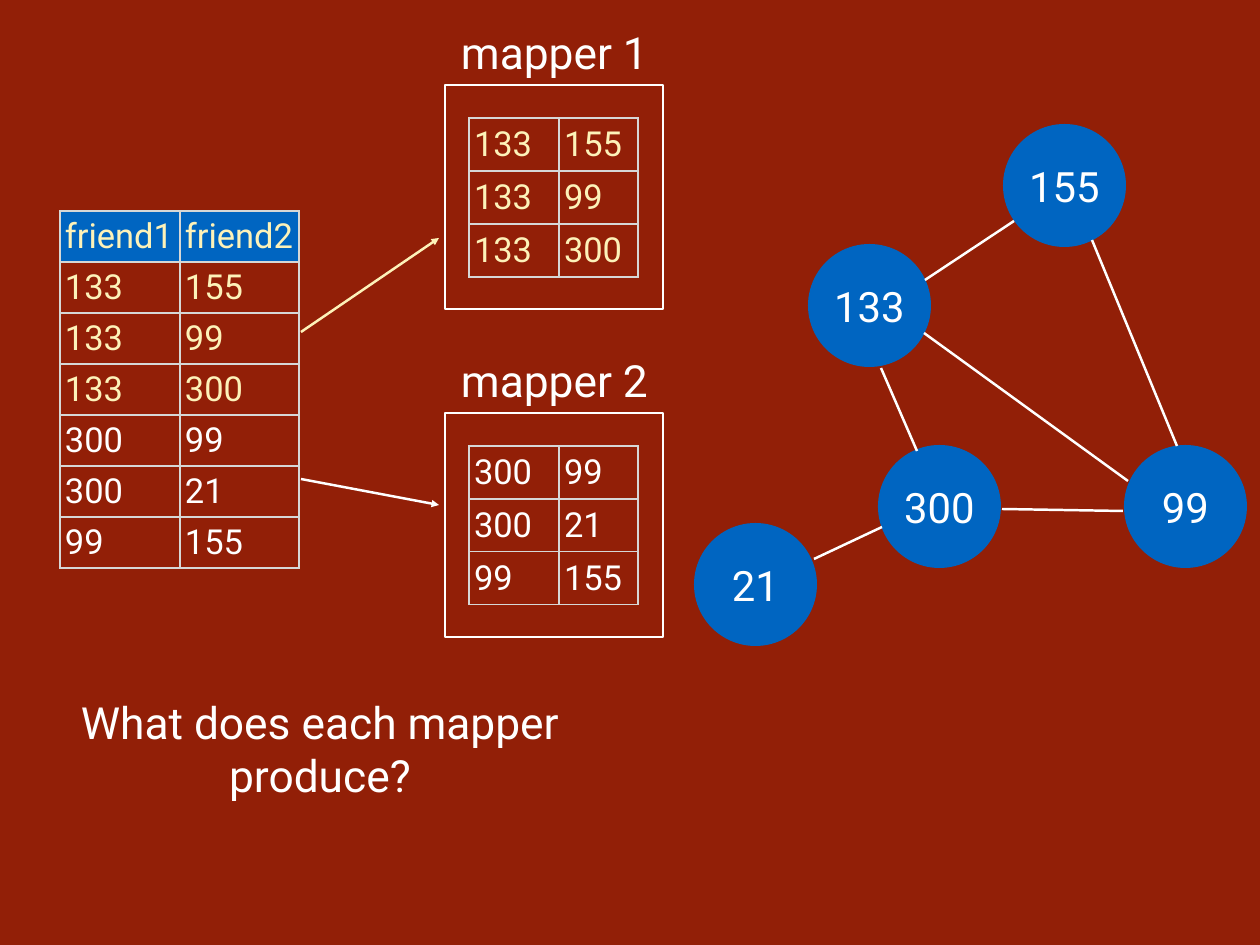
from typing import NamedTuple

from lxml import etree
from pptx import Presentation
from pptx.dml.color import RGBColor
from pptx.enum.shapes import MSO_CONNECTOR, MSO_SHAPE
from pptx.enum.text import MSO_ANCHOR as Anchor, MSO_AUTO_SIZE as AutoSize, PP_ALIGN as Align
from pptx.oxml.ns import qn
from pptx.util import Emu, Pt

EMU_PER_PX = 10320
FONT = "Roboto"
COLORS = {"bg": "921F07", "blue": "0065C1", "cream": "FDF2B9",
          "white": "FFFFFF", "grid": "D6D7D6"}
INSET = 5
NODE_SIZE = 123
LINE_WIDTH = Pt(2)


class Node(NamedTuple):
    label: str
    x: int
    y: int


class Line(NamedTuple):
    x1: int
    y1: int
    x2: int
    y2: int
    color: str = "white"
    arrow: bool = False


class Mapper(NamedTuple):
    name: str
    y: int
    rows: list
    color: str


MAPPER_1_ROWS = [("133", "155"), ("133", "99"), ("133", "300")]
MAPPER_2_ROWS = [("300", "99"), ("300", "21"), ("99", "155")]
FRIEND_ROWS = [("friend1", "friend2")] + MAPPER_1_ROWS + MAPPER_2_ROWS

MAPPERS = [Mapper("mapper 1", 85, MAPPER_1_ROWS, "cream"),
           Mapper("mapper 2", 413, MAPPER_2_ROWS, "white")]
ARROWS = [Line(301, 332, 439, 238, "cream", True),
          Line(301, 479, 439, 505, "white", True)]
NODES = [Node("133", 808, 244), Node("155", 1003, 124), Node("99", 1124, 445),
         Node("300", 878, 445), Node("21", 694, 523)]
EDGES = [Line(925, 280, 1014, 221), Line(1128, 481, 924, 333), Line(917, 451, 881, 368),
         Line(1123, 511, 1002, 509), Line(882, 527, 814, 559), Line(1092, 240, 1177, 446)]


def px(n: int) -> Emu:
    return Emu(n * EMU_PER_PX)


def rgb(name: str) -> RGBColor:
    return RGBColor.from_string(COLORS[name])


def set_text(tf, text: str, *, size: int, color: str = "white", align=Align.CENTER,
             anchor=Anchor.MIDDLE, inset: int = INSET, wrap: bool = True) -> None:
    tf.word_wrap = wrap
    tf.vertical_anchor = anchor
    tf.margin_left = tf.margin_right = tf.margin_top = tf.margin_bottom = px(inset)
    p = tf.paragraphs[0]
    p.alignment = align
    r = p.add_run()
    r.text = text
    r.font.name, r.font.size = FONT, Pt(size)
    r.font.color.rgb = rgb(color)


def set_borders(cell, header: bool) -> None:
    tc_pr = cell._tc.get_or_add_tcPr()
    for i, side in enumerate(("lnL", "lnR", "lnT", "lnB")):
        width = Pt(2 if header and side == "lnB" else 1)
        ln = etree.Element(qn(f"a:{side}"), w=str(width))
        fill = etree.SubElement(ln, qn("a:solidFill"))
        etree.SubElement(fill, qn("a:srgbClr"), val=COLORS["grid"])
        tc_pr.insert(i, ln)


def add_grid(s, x: int, y: int, rows: list, colors: list, widths: tuple,
             row_height: int, header: bool = False) -> None:
    frame = s.shapes.add_table(len(rows), len(widths), px(x), px(y),
                               px(sum(widths)), px(row_height * len(rows)))
    table = frame.table
    table.first_row = header
    table.horz_banding = False
    for col, width in zip(table.columns, widths):
        col.width = px(width)
    for i, row in enumerate(rows):
        table.rows[i].height = px(row_height)
        for j, text in enumerate(row):
            cell = table.cell(i, j)
            is_header = header and i == 0
            if is_header:
                cell.fill.solid()
                cell.fill.fore_color.rgb = rgb("blue")
            else:
                cell.fill.background()
            set_borders(cell, is_header)
            cell.vertical_anchor = Anchor.MIDDLE
            cell.margin_left = cell.margin_right = px(INSET)
            cell.margin_top = cell.margin_bottom = px(INSET)
            p = cell.text_frame.paragraphs[0]
            p.alignment = Align.LEFT
            r = p.add_run()
            r.text = text
            r.font.name, r.font.size, r.font.bold = FONT, Pt(28), False
            r.font.color.rgb = rgb(colors[i])


def add_line(s, line: Line) -> None:
    c = s.shapes.add_connector(MSO_CONNECTOR.STRAIGHT, px(line.x1), px(line.y1),
                               px(line.x2), px(line.y2))
    c.line.color.rgb = rgb(line.color)
    c.line.width = LINE_WIDTH
    if line.arrow:
        etree.SubElement(c.line._get_or_add_ln(), qn("a:tailEnd"), type="triangle")
    etree.SubElement(c._element.spPr, qn("a:effectLst"))


def add_mapper(s, m: Mapper) -> None:
    box = s.shapes.add_shape(MSO_SHAPE.RECTANGLE, px(445), px(m.y), px(218), px(224))
    box.shadow.inherit = False
    box.fill.background()
    box.line.color.rgb = rgb("white")
    box.line.width = LINE_WIDTH
    label = s.shapes.add_textbox(px(453), px(m.y - 65), px(203), px(63))
    set_text(label.text_frame, m.name, size=36, wrap=False)
    add_grid(s, 469, m.y + 33, m.rows, [m.color] * len(m.rows), (90, 79), 53)


def add_node(s, node: Node) -> None:
    sp = s.shapes.add_shape(MSO_SHAPE.OVAL, px(node.x), px(node.y),
                            px(NODE_SIZE), px(NODE_SIZE))
    sp.shadow.inherit = False
    sp.fill.solid()
    sp.fill.fore_color.rgb = rgb("blue")
    sp.line.fill.background()
    set_text(sp.text_frame, node.label, size=34, inset=0)


def main() -> None:
    prs = Presentation()
    prs.slide_width, prs.slide_height = px(1260), px(945)
    s = prs.slides.add_slide(prs.slide_layouts[5])
    s.background.fill.solid()
    s.background.fill.fore_color.rgb = rgb("bg")

    # Question
    title = s.shapes.title
    title.left, title.top, title.width, title.height = px(60), px(690), px(520), px(116)
    title.text_frame.auto_size = AutoSize.NONE
    set_text(title.text_frame, "What does each mapper produce?", size=36, anchor=Anchor.TOP)

    # Friend pairs, split between the mappers
    add_grid(s, 60, 211, FRIEND_ROWS, ["cream"] * 4 + ["white"] * 3, (120, 119), 51,
             header=True)
    for mapper in MAPPERS:
        add_mapper(s, mapper)
    for arrow in ARROWS:
        add_line(s, arrow)

    # Friendship graph
    for node in NODES:
        add_node(s, node)
    for edge in EDGES:
        add_line(s, edge)

    prs.save("out.pptx")


if __name__ == "__main__":
    main()
